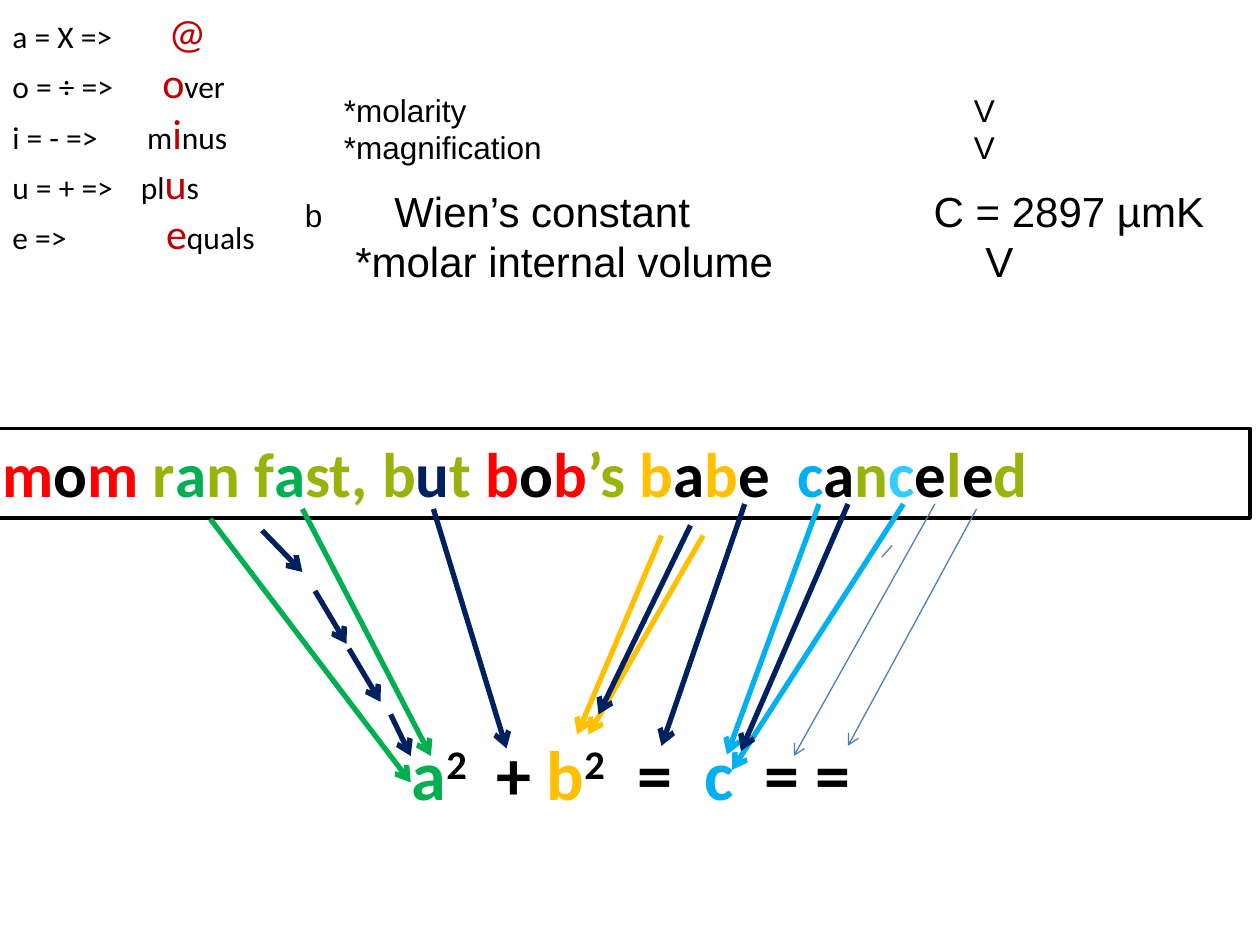
from dataclasses import dataclass
from lxml import etree
from pptx import Presentation
from pptx.dml.color import RGBColor
from pptx.enum import shapes, text
from pptx.oxml.ns import qn
from pptx.util import Inches, Pt


@dataclass(frozen=True)
class Theme:
    """Colours, fonts and type sizes of the slide."""
    black: str = "000000"
    white: str = "FFFFFF"
    dark: str = "C00000"
    red: str = "FF0000"
    lime: str = "98B40C"
    green: str = "00B050"
    navy: str = "002060"
    gold: str = "FFC000"
    blue: str = "00B0F0"
    sky: str = "33CCFF"
    steel: str = "4B7EBC"
    sans: str = "Calibri"
    plain: str = "Arial"
    small: int = 18
    large: int = 24
    head: int = 36
    sums: int = 40


T = Theme()


def style(run, font, size, color, bold=False):
    """Set the font of one run."""
    face = run.font
    face.name, face.size, face.bold = font, Pt(size), bold
    face.color.rgb = RGBColor.from_string(color)


def set_tabs(par, stops):
    """Give a paragraph left tab stops, in inches from the text edge."""
    tabs = etree.SubElement(par._p.get_or_add_pPr(), qn("a:tabLst"))
    for stop in stops:
        etree.SubElement(tabs, qn("a:tab"), pos=str(Inches(stop)), algn="l")


def fill_line(par, parts, font, bold=False, stops=()):
    """Write (words, size, colour) parts as the runs of a paragraph."""
    for words, size, color in parts:
        run = par.add_run()
        run.text = words
        style(run, font, size, color, bold)
    if stops:
        set_tabs(par, stops)


def add_box(slide, box, inset=0.1):
    """Add a wrapping text box and return its frame."""
    frame = slide.shapes.add_textbox(*map(Inches, box)).text_frame
    frame.word_wrap = True
    frame.margin_left = Inches(inset)
    return frame


def next_par(frame, index):
    """Return the first paragraph, or a new one after it."""
    return frame.add_paragraph() if index else frame.paragraphs[0]


def add_key(slide, box):
    """List the vowels and the signs they stand for."""
    rows = [("a = X =>\t", "@", "", 1.24), ("o = ÷ =>\t", "o", "ver", 1.19),
            ("i = - =>\tm", "i", "nus", 1.07), ("u = + =>\tpl", "u", "s", 1.02),
            ("e =>\t", "e", "quals", 1.22)]
    frame = add_box(slide, box)
    for index, (start, vowel, end, stop) in enumerate(rows):
        parts = [(start, T.small, T.black), (vowel, T.large, T.dark)]
        if end:
            parts.append((end, T.small, T.black))
        fill_line(next_par(frame, index), parts, T.sans, stops=[stop])


def add_terms(slide, box, inset, rows):
    """List physics terms with their values in tabbed columns."""
    frame = add_box(slide, box, inset)
    for index, (parts, stops) in enumerate(rows):
        inked = [(words, size, T.black) for words, size in parts]
        fill_line(next_par(frame, index), inked, T.plain, stops=stops)


def add_banner(slide, box):
    """Show the memory sentence in a framed bar."""
    bar = slide.shapes.add_shape(shapes.MSO_SHAPE.RECTANGLE, *map(Inches, box))
    bar.shadow.inherit = False
    bar.fill.solid()
    bar.fill.fore_color.rgb = RGBColor.from_string(T.white)
    bar.line.color.rgb = RGBColor.from_string(T.black)
    bar.line.width = Pt(2)
    frame = bar.text_frame
    frame.word_wrap = True
    frame.vertical_anchor = text.MSO_ANCHOR.TOP
    par = frame.paragraphs[0]
    par.alignment = text.PP_ALIGN.LEFT
    parts = [("m", T.red), ("o", T.black), ("m ", T.red), ("r", T.lime),
             ("a", T.green), ("n f", T.lime), ("a", T.green), ("st, b", T.lime),
             ("u", T.navy), ("t", T.lime), (" b", T.red), ("o", T.black),
             ("b", T.red), ("’s ", T.lime), ("b", T.gold), ("a", T.black),
             ("b", T.gold), ("e\t", T.black), ("c", T.blue), ("a", T.black),
             ("n", T.lime), ("c", T.sky), ("e", T.black), ("l", T.lime),
             ("e", T.black), ("d", T.lime)]
    sized = [(words, T.head, color) for words, color in parts]
    fill_line(par, sized, T.sans, True, [6.31])


def add_sum(slide, box):
    """Show the equation that the sentence spells."""
    parts = [("a", T.green), ("2", T.black), ("\t+ ", T.black), ("b", T.gold),
             ("2", T.black), ("\t=\t", T.black), ("c\t", T.blue), ("= =", T.black)]
    par = add_box(slide, box).paragraphs[0]
    sized = [(words, T.sums, color) for words, color in parts]
    fill_line(par, sized, T.sans, True, [0.67, 1.79, 2.32, 2.8])
    for run in par.runs:
        if run.text == "2":
            run._r.get_or_add_rPr().set("baseline", "30000")


def add_line(slide, ends, color, width, arrow=True):
    """Draw one straight line, with an arrowhead at its end if asked."""
    line = slide.shapes.add_connector(
        shapes.MSO_CONNECTOR.STRAIGHT, *map(Inches, ends))
    line.line.color.rgb = RGBColor.from_string(color)
    line.line.width = Pt(width)
    props = line._element.spPr
    if arrow:
        etree.SubElement(props.find(qn("a:ln")), qn("a:tailEnd"), type="arrow")
    etree.SubElement(props, qn("a:effectLst"))


def add_arrows(slide, box):
    """Link the letters of the sentence to the equation."""
    left, top = box[:2]
    thick, thin = 3, 0.75
    rows = [(T.green, thick, 0.17, 0.12, 1.76, 2.21),
            (T.gold, thick, 3.75, 0.25, 3.08, 1.83),
            (T.gold, thick, 4.08, 0.25, 3.17, 1.83),
            (T.blue, thick, 5, 0, 4.27, 1.99),
            (T.green, thick, 0.9, 0.04, 1.92, 2),
            (T.blue, thick, 5.67, 0, 4.31, 2.11),
            (T.navy, thick, 1.94, 0.04, 2.52, 1.94),
            (T.navy, thick, 4.41, 0, 3.75, 1.92),
            (T.steel, thin, 5.5, 0.42, 5.58, 0.33, False),
            (T.navy, thick, 0.58, 0.21, 0.9, 0.54),
            (T.navy, thick, 1, 0.69, 1.25, 1.11),
            (T.navy, thick, 1.27, 1.15, 1.52, 1.57),
            (T.navy, thick, 1.6, 1.67, 1.76, 2),
            (T.navy, thick, 3.98, 0.17, 3.25, 1.67),
            (T.navy, thick, 5.23, 0, 4.38, 1.96),
            (T.steel, thin, 5.92, 0, 4.8, 2),
            (T.steel, thin, 6.25, 0.04, 5.23, 1.92)]
    for color, width, x1, y1, x2, y2, *arrow in rows:
        ends = (left + x1, top + y1, left + x2, top + y2)
        add_line(slide, ends, color, width, *arrow)


def main():
    """Build the slide and save it."""
    deck = Presentation()
    deck.slide_width, deck.slide_height = Inches(10), Inches(7.5)
    slide = deck.slides.add_slide(deck.slide_layouts[6])
    add_key(slide, (0, 0, 5, 2.42))
    add_sum(slide, (3.17, 5.75, 3.83, 0.77))
    add_banner(slide, (-0.08, 3.4, 10, 0.71))
    add_arrows(slide, (1.5, 4, 6.25, 2.21))
    add_terms(slide, (1.92, 1.42, 7.83, 0.91), 0.5, [
        ([("b", T.small), ("\tWien’s constant\tC = 2897 µmK", T.large)], [0.71, 4.99]),
        ([("\t*molar internal volume\tV", T.large)], [0.4, 5.4])])
    add_terms(slide, (1.83, 0.67, 8.17, 0.71), 0.9, [
        ([(f"{term}\tV", T.small)], [5]) for term in ("*molarity", "*magnification")])
    deck.save("out.pptx")


if __name__ == "__main__":
    main()
